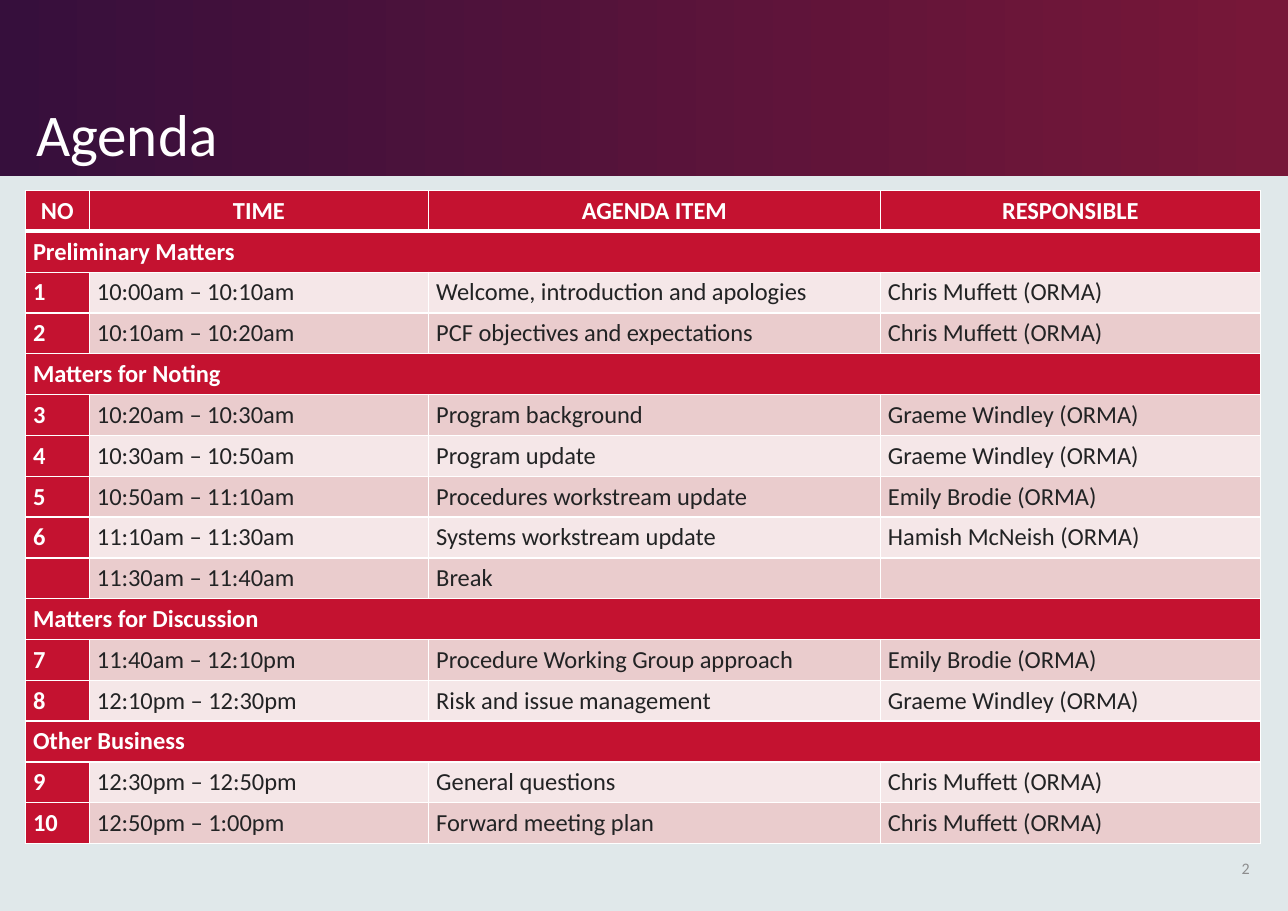
from dataclasses import dataclass

from lxml import etree
from pptx import Presentation
from pptx import util as u
from pptx.dml.color import RGBColor
from pptx.enum import shapes, text
from pptx.oxml import ns


@dataclass(frozen=True)
class Theme:
    font: str = "Calibri"
    background: str = "E0E8EA"
    banner_start: str = "360F3C"
    banner_end: str = "771738"
    red: str = "C41230"
    band_light: str = "F5E7E8"
    band_dark: str = "EACCCD"
    white: str = "FFFFFF"
    ink: str = "222324"
    grey: str = "8D8D8E"
    title_size: float = 38.6
    table_size: float = 16
    number_size: float = 10.5
    rule: float = 1
    header_rule: float = 3


THEME = Theme()

COLUMNS = [("NO", 0.58), ("TIME", 3.08), ("AGENDA ITEM", 4.1), ("RESPONSIBLE", 3.45)]

CHRIS = "Chris Muffett (ORMA)"
GRAEME = "Graeme Windley (ORMA)"
EMILY = "Emily Brodie (ORMA)"
HAMISH = "Hamish McNeish (ORMA)"

AGENDA = [
    ("Preliminary Matters", [
        ("1", "10:00am – 10:10am", "Welcome, introduction and apologies", CHRIS),
        ("2", "10:10am – 10:20am", "PCF objectives and expectations", CHRIS),
    ]),
    ("Matters for Noting", [
        ("3", "10:20am – 10:30am", "Program background", GRAEME),
        ("4", "10:30am – 10:50am", "Program update", GRAEME),
        ("5", "10:50am – 11:10am", "Procedures workstream update", EMILY),
        ("6", "11:10am – 11:30am", "Systems workstream update", HAMISH),
        ("", "11:30am – 11:40am", "Break", ""),
    ]),
    ("Matters for Discussion", [
        ("7", "11:40am – 12:10pm", "Procedure Working Group approach", EMILY),
        ("8", "12:10pm – 12:30pm", "Risk and issue management", GRAEME),
    ]),
    ("Other Business", [
        ("9", "12:30pm – 12:50pm", "General questions", CHRIS),
        ("10", "12:50pm – 1:00pm", "Forward meeting plan", CHRIS),
    ]),
]


def color(value):
    return RGBColor.from_string(value)


def style_runs(paragraph, size, value, bold=False):
    for run in paragraph.runs:
        run.font.name = THEME.font
        run.font.size = u.Pt(size)
        run.font.bold = bold
        run.font.color.rgb = color(value)


def add_text(slide, left, top, width, height, content, size, value, anchor, alignment):
    box = slide.shapes.add_textbox(*map(u.Inches, (left, top, width, height)))
    frame = box.text_frame
    frame.word_wrap = True
    frame.vertical_anchor = anchor
    frame.text = content
    paragraph = frame.paragraphs[0]
    paragraph.alignment = alignment
    style_runs(paragraph, size, value)
    return paragraph


def add_banner(slide, left, top, width, height):
    banner = slide.shapes.add_shape(
        shapes.MSO_SHAPE.RECTANGLE, *map(u.Inches, (left, top, width, height)))
    banner.shadow.inherit = False
    banner.line.fill.background()
    banner.fill.gradient()
    banner.fill.gradient_angle = 0
    start, end = banner.fill.gradient_stops
    start.color.rgb, start.position = color(THEME.banner_start), 0
    end.color.rgb, end.position = color(THEME.banner_end), 0.99
    title = add_text(slide, left + 0.23, top + 0.16, 8.63, height - 0.17, "Agenda",
                     THEME.title_size, THEME.white, text.MSO_ANCHOR.BOTTOM, text.PP_ALIGN.LEFT)
    title.line_spacing = 0.9


def set_borders(cell, widths):
    properties = cell._tc.get_or_add_tcPr()
    for side, width in widths.items():
        line = etree.SubElement(properties, ns.qn(f"a:ln{side}"), w=str(u.Pt(width)))
        fill = etree.SubElement(line, ns.qn("a:solidFill"))
        etree.SubElement(fill, ns.qn("a:srgbClr"), val=THEME.white)


def style_cell(cell, content, fill, row):
    top = THEME.header_rule if row == 1 else THEME.rule
    bottom = THEME.header_rule if row == 0 else THEME.rule
    set_borders(cell, {"L": THEME.rule, "R": THEME.rule, "T": top, "B": bottom})
    cell.fill.solid()
    cell.fill.fore_color.rgb = color(fill)
    cell.margin_left = cell.margin_right = u.Inches(0.07)
    cell.margin_top = cell.margin_bottom = 0
    cell.vertical_anchor = text.MSO_ANCHOR.MIDDLE
    cell.text_frame.text = content
    paragraph = cell.text_frame.paragraphs[0]
    paragraph.space_before = paragraph.space_after = u.Pt(1)
    paragraph.alignment = text.PP_ALIGN.CENTER if row == 0 else text.PP_ALIGN.LEFT
    on_red = fill == THEME.red
    style_runs(paragraph, THEME.table_size, THEME.white if on_red else THEME.ink, on_red)


def add_agenda(slide, left, top, width, height):
    headings = tuple(name for name, _ in COLUMNS)
    rows = [headings]
    for section, items in AGENDA:
        rows += [(section, "", "", ""), *items]
    table = slide.shapes.add_table(
        len(rows), len(COLUMNS), *map(u.Inches, (left, top, width, height))).table
    table.first_row = table.horz_banding = False
    for column, (_, column_width) in zip(table.columns, COLUMNS):
        column.width = u.Inches(column_width)
    sections = {section for section, _ in AGENDA}
    for row, values in enumerate(rows):
        is_section = values[0] in sections
        band = THEME.band_dark if row % 2 else THEME.band_light
        for column, content in enumerate(values):
            on_red = row == 0 or column == 0 or is_section
            style_cell(table.cell(row, column), content, THEME.red if on_red else band, row)
        if is_section:
            table.cell(row, 0).merge(table.cell(row, len(COLUMNS) - 1))


def add_slide_number(slide, left, top, width, height):
    add_text(slide, left, top, width, height, "2", THEME.number_size, THEME.grey,
             text.MSO_ANCHOR.MIDDLE, text.PP_ALIGN.RIGHT)


def main():
    presentation = Presentation()
    presentation.slide_width = u.Inches(11.69)
    presentation.slide_height = u.Inches(8.27)
    slide = presentation.slides.add_slide(presentation.slide_layouts[6])
    slide.background.fill.solid()
    slide.background.fill.fore_color.rgb = color(THEME.background)
    add_banner(slide, 0, 0, 11.69, 1.6)
    add_slide_number(slide, 10.89, 7.66, 0.55, 0.44)
    add_agenda(slide, 0.23, 1.73, 11.21, 5.93)
    presentation.save("out.pptx")


if __name__ == "__main__":
    main()
